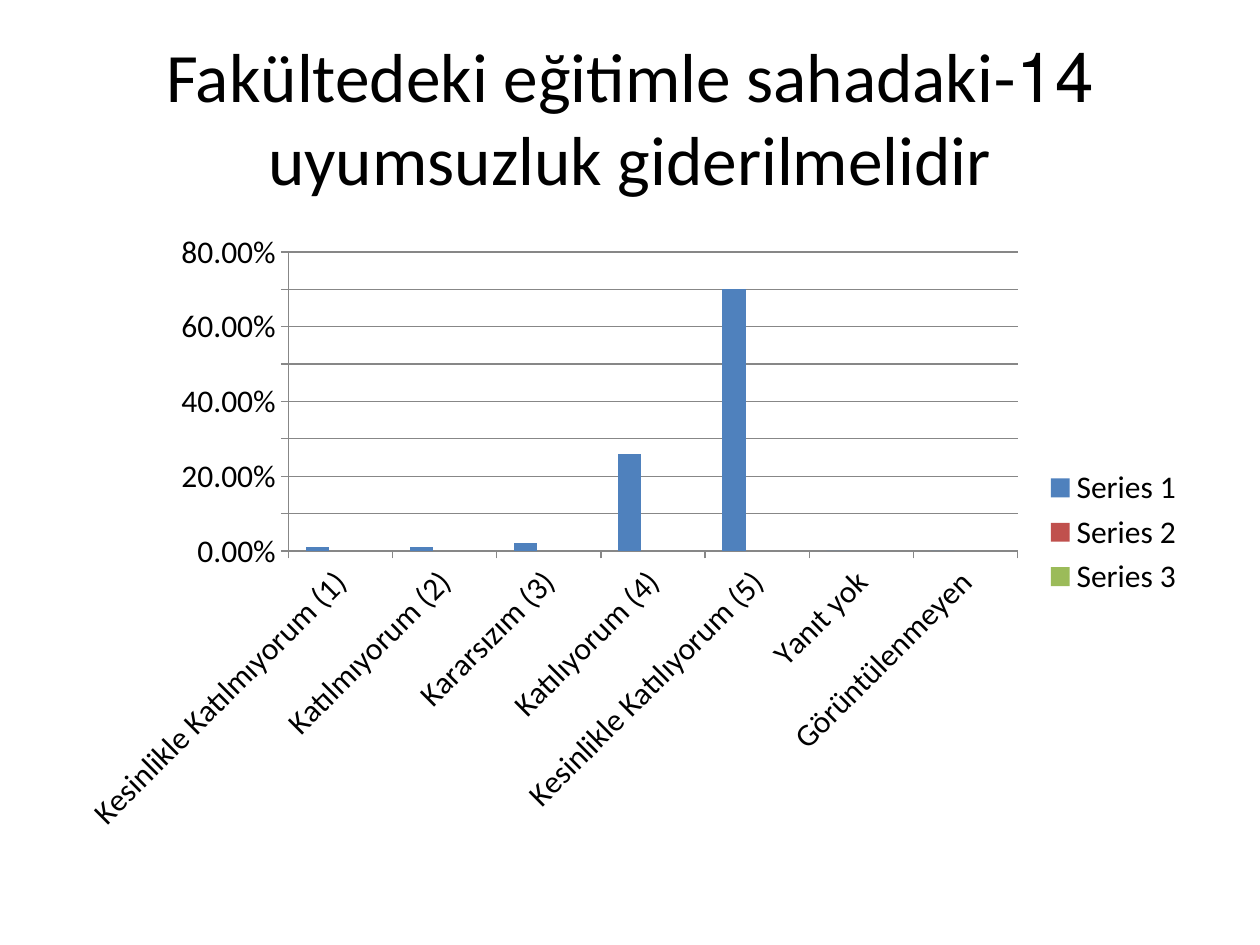
from pptx import Presentation
from pptx.chart import data as cd
from pptx.dml import color as col
from pptx.enum import chart as ch, text
from pptx.util import Pt

INK = "000000"
LINE = "878787"
CATS = ["Kesinlikle Katılmıyorum (1)", "Katılmıyorum (2)", "Kararsızım (3)",
        "Katılıyorum (4)", "Kesinlikle Katılıyorum (5)", "Yanıt yok",
        "Görüntülenmeyen"]
SERIES = [("Series 1", [0.01, 0.01, 0.02, 0.26, 0.7, 0, 0], "4F81BD"),
          ("Series 2", [None] * len(CATS), "C0504D"),
          ("Series 3", [None] * len(CATS), "9BBB59")]


def put(obj, **vals):
    """Set each named attribute on the object."""
    for name, val in vals.items():
        setattr(obj, name, val)


def hue(fmt, code):
    """Give a font, fill or line format a solid hex colour."""
    fill = fmt if hasattr(fmt, "solid") else fmt.fill
    fill.solid()
    fill.fore_color.rgb = col.RGBColor.from_string(code)


def style(font, size):
    """Set the typeface, size and ink of a font."""
    put(font, name="Calibri", size=Pt(size))
    hue(font, INK)


def title(slide, box, words):
    """Place the centred right-to-left heading in its box."""
    frame = slide.shapes.add_textbox(*map(Pt, box)).text_frame
    put(frame, word_wrap=True, vertical_anchor=text.MSO_ANCHOR.MIDDLE)
    para = frame.paragraphs[0]
    para.alignment = text.PP_ALIGN.CENTER
    para._p.get_or_add_pPr().set("rtl", "1")
    run = para.add_run()
    run.text = words
    style(run.font, 39.6)


def graph(slide, box):
    """Place the clustered column chart of the answers in its box."""
    data = cd.CategoryChartData(number_format="0.00%")
    data.categories = CATS
    for name, vals, _ in SERIES:
        data.add_series(name, vals)
    chart = slide.shapes.add_chart(
        ch.XL_CHART_TYPE.COLUMN_CLUSTERED, *map(Pt, box), data).chart
    style(chart.font, 18)
    put(chart, has_title=False, has_legend=True)
    put(chart.legend, position=ch.XL_LEGEND_POSITION.RIGHT,
        include_in_layout=False)
    plot = chart.plots[0]
    put(plot, gap_width=150, overlap=0, vary_by_categories=False)
    for bars, (_, _, code) in zip(plot.series, SERIES):
        hue(bars.format, code)
    for axis in (chart.category_axis, chart.value_axis):
        put(axis, major_tick_mark=ch.XL_TICK_MARK.OUTSIDE,
            minor_tick_mark=ch.XL_TICK_MARK.NONE)
        hue(axis.format.line, LINE)
    axis = chart.value_axis
    put(axis, has_major_gridlines=True, minimum_scale=0,
        maximum_scale=0.8, major_unit=0.1)
    put(axis.tick_labels, number_format="0.00%",
        number_format_is_linked=False)
    hue(axis.major_gridlines.format.line, LINE)


def main():
    """Build the slide and save it."""
    deck = Presentation()
    put(deck, slide_width=Pt(720), slide_height=Pt(540))
    slide = deck.slides.add_slide(deck.slide_layouts[6])
    title(slide, (36, 21.6, 648, 90),
          "14-Fakültedeki eğitimle sahadaki uyumsuzluk giderilmelidir")
    graph(slide, (36, 126, 648, 356.4))
    deck.save("out.pptx")


if __name__ == "__main__":
    main()
